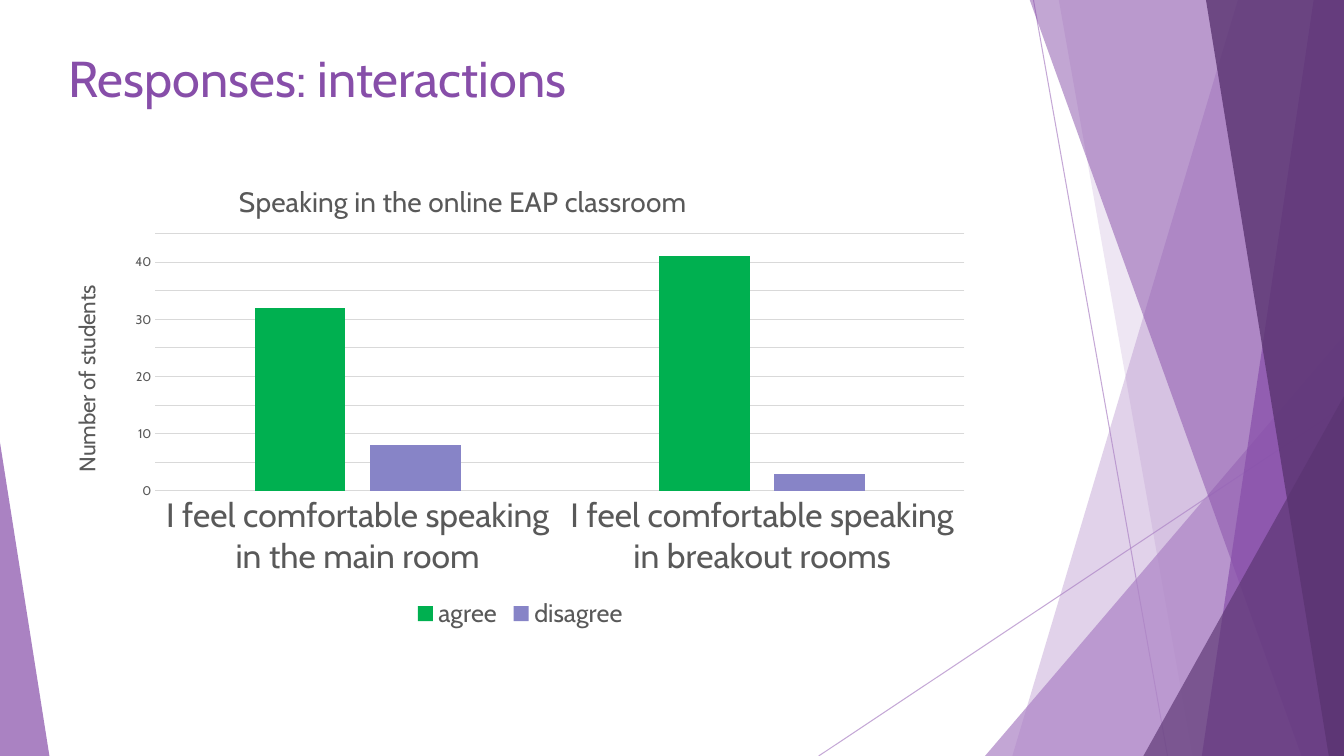
from copy import deepcopy

from lxml import etree
from pptx import Presentation
from pptx.chart.data import CategoryChartData
from pptx.dml.color import RGBColor
from pptx.enum.chart import XL_CHART_TYPE, XL_LEGEND_POSITION, XL_TICK_MARK
from pptx.enum.shapes import MSO_CONNECTOR, MSO_SHAPE
from pptx.enum.text import MSO_ANCHOR
from pptx.oxml.ns import qn
from pptx.util import Inches, Pt

COLUMNS = XL_CHART_TYPE.COLUMN_CLUSTERED
NO_TICK = XL_TICK_MARK.NONE
BOTTOM = XL_LEGEND_POSITION.BOTTOM
STRAIGHT = MSO_CONNECTOR.STRAIGHT
TRIANGLE = MSO_SHAPE.ISOSCELES_TRIANGLE
MIDDLE = MSO_ANCHOR.MIDDLE

WIDTH, HEIGHT = 13.33, 7.5
FONT = "Cabin"
LILAC, PURPLE, PLUM = "AD84C6", "874EA9", "5A3471"
GREY, GRID = "595959", "D9D9D9"


def rgb(value):
    return RGBColor.from_string(value)


def set_font(font, size, color):
    font.name = FONT
    font.size = Pt(size)
    font.bold = False
    font.color.rgb = rgb(color)


def set_opacity(shape, percent):
    for color in shape._element.spPr.iter(qn("a:srgbClr")):
        etree.SubElement(color, qn("a:alpha"), val=str(percent * 1000))


def fill_translucent(shape, color, opacity):
    shape.shadow.inherit = False
    shape.fill.solid()
    shape.fill.fore_color.rgb = rgb(color)
    shape.line.fill.background()
    set_opacity(shape, opacity)


def add_ray(slide, start, end):
    ray = slide.shapes.add_connector(STRAIGHT, *map(Inches, start + end))
    ray.line.color.rgb = rgb(LILAC)
    ray.line.width = Pt(0.75)
    set_opacity(ray, 70)
    etree.SubElement(ray._element.spPr, qn("a:effectLst"))


def add_facet(slide, top_x, bottom_x, color, opacity):
    """Fill from a slanted left edge to the right side of the slide."""
    top = -0.01
    corners = [(WIDTH, top), (WIDTH, HEIGHT), (bottom_x, HEIGHT)]
    outline = slide.shapes.build_freeform(Inches(top_x), Inches(top))
    outline.add_line_segments([(Inches(x), Inches(y)) for x, y in corners])
    fill_translucent(outline.convert_to_shape(), color, opacity)


def add_corner(slide, left, top, width, apex, color, opacity):
    """Add a right triangle standing on the slide's lower edge."""
    corner = slide.shapes.add_shape(TRIANGLE, Inches(left), Inches(top),
                                    Inches(width), Inches(HEIGHT - top))
    corner.adjustments[0] = apex
    fill_translucent(corner, color, opacity)


def add_backdrop(slide):
    add_ray(slide, (10.25, 0), (11.58, HEIGHT))
    add_ray(slide, (WIDTH, 4.03), (8.12, HEIGHT))
    add_facet(slide, 12.28, 10.04, LILAC, 36)
    add_facet(slide, 10.5, 11.83, LILAC, 20)
    add_corner(slide, 9.77, 3.33, 3.56, 1, LILAC, 72)
    add_facet(slide, 10.21, 12.91, PURPLE, 50)
    add_facet(slide, 13.03, 11.92, PURPLE, 70)
    add_facet(slide, 11.96, 13.18, PLUM, 80)
    add_corner(slide, 11.34, 3.93, 1.99, 1, PLUM, 66)
    add_corner(slide, 0, 4.39, 0.49, 0, PURPLE, 70)


def add_heading(slide, text):
    box = slide.shapes.add_textbox(Inches(0.58), Inches(0.37), Inches(6.39), Inches(0.79))
    frame = box.text_frame
    frame.word_wrap = True
    frame.vertical_anchor = MIDDLE
    heading = frame.paragraphs[0]
    heading.text = text
    set_font(heading.font, 36, PURPLE)


def place(chart, xpath, index, **fractions):
    """Fix a chart part at fractions of the chart frame."""
    part = chart._chartSpace.xpath(xpath)[0]
    for old in part.findall(qn("c:layout")):
        part.remove(old)
    layout = etree.Element(qn("c:layout"))
    manual = etree.SubElement(layout, qn("c:manualLayout"))
    if "w" in fractions:
        etree.SubElement(manual, qn("c:layoutTarget"), val="inner")
    for side in "xy":
        etree.SubElement(manual, qn(f"c:{side}Mode"), val="edge")
    for key, value in fractions.items():
        etree.SubElement(manual, qn(f"c:{key}"), val=str(value))
    part.insert(index, layout)


def write_title(title, text, size):
    title.text_frame.text = text
    set_font(title.text_frame.paragraphs[0].font, size, GREY)


def style_line(line):
    line.color.rgb = rgb(GRID)
    line.width = Pt(0.75)


def style_gridlines(chart):
    """Give major and minor gridlines the same line."""
    chart.value_axis.has_minor_gridlines = True
    style_line(chart.value_axis.major_gridlines.format.line)
    look = chart._chartSpace.xpath(".//c:valAx/c:majorGridlines/c:spPr")[0]
    chart._chartSpace.xpath(".//c:valAx/c:minorGridlines")[0].append(deepcopy(look))


def style_axes(chart):
    statements, students = chart.category_axis, chart.value_axis
    for axis, size in ((statements, 24), (students, 9)):
        axis.major_tick_mark = axis.minor_tick_mark = NO_TICK
        set_font(axis.tick_labels.font, size, GREY)
    style_line(statements.format.line)
    students.format.line.fill.background()
    students.minimum_scale, students.maximum_scale = 0, 45
    students.major_unit, students.minor_unit = 10, 5
    style_gridlines(chart)
    write_title(students.axis_title, "Number of students", 16)
    students.axis_title.text_frame._txBody.bodyPr.set("rot", "-5400000")


def add_response_chart(slide):
    data = CategoryChartData()
    data.categories = ["I feel comfortable speaking in the main room",
                       "I feel comfortable speaking in breakout rooms"]
    data.add_series("agree", (32, 41))
    data.add_series("disagree", (8, 3))
    chart = slide.shapes.add_chart(COLUMNS, Inches(0.58), Inches(1.56),
                                   Inches(9.16), Inches(4.73), data).chart
    set_font(chart.font, 10, GREY)
    write_title(chart.chart_title, "Speaking in the online EAP classroom", 20)
    style_axes(chart)

    columns = chart.plots[0]
    columns.vary_by_categories = False
    columns.gap_width, columns.overlap = 219, -27
    for answer, color in zip(columns.series, ("00B050", "8784C7")):
        answer.format.fill.solid()
        answer.format.fill.fore_color.rgb = rgb(color)

    chart.has_legend = True
    chart.legend.position = BOTTOM
    chart.legend.include_in_layout = False
    set_font(chart.legend.font, 18, GREY)

    place(chart, "c:chart/c:title", 1, x=0.19, y=0.04)
    place(chart, ".//c:valAx/c:title", 1, x=0.01, y=0.26)
    place(chart, "c:chart/c:plotArea", 0, x=0.105, y=0.16, w=0.876, h=0.54)


def main():
    deck = Presentation()
    deck.slide_width, deck.slide_height = Inches(WIDTH), Inches(HEIGHT)
    slide = deck.slides.add_slide(deck.slide_layouts[6])
    add_backdrop(slide)
    add_heading(slide, "Responses: interactions")
    add_response_chart(slide)
    deck.save("out.pptx")


if __name__ == "__main__":
    main()
